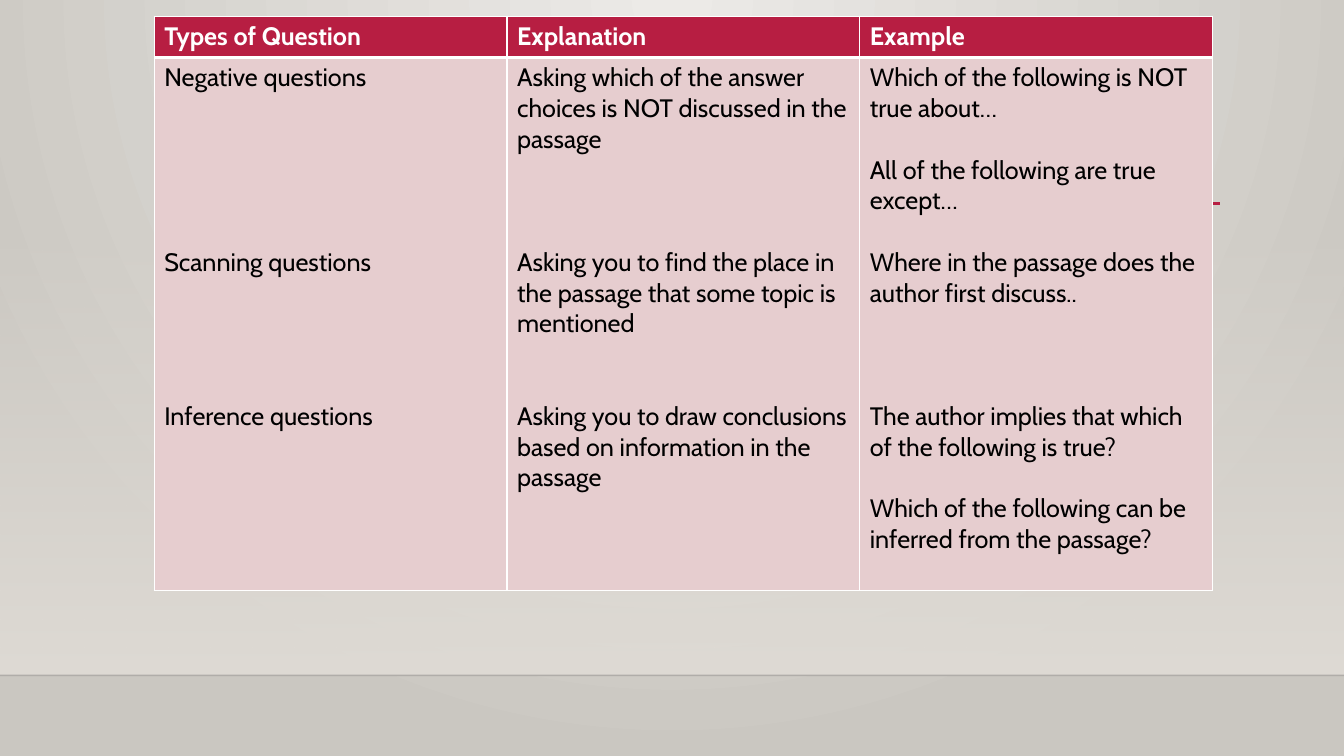
from dataclasses import dataclass
from typing import NamedTuple

from lxml.etree import SubElement
from pptx import Presentation
from pptx.dml.color import RGBColor
from pptx.enum.shapes import MSO_CONNECTOR, MSO_SHAPE
from pptx.oxml.ns import qn
from pptx.slide import Slide
from pptx.table import _Cell
from pptx.util import Pt


@dataclass(frozen=True)
class Theme:
    font: str = "Cabin"
    text_size: float = 18
    line_pitch: float = 22
    crimson: str = "B71E42"
    blush: str = "E6CDCF"
    white: str = "FFFFFF"
    black: str = "000000"
    floor_edge: str = "000001"
    wall: str = "DFDBD5"
    glow: str = "ECEAE7"
    dusk: str = "CAC7C1"


class Stop(NamedTuple):
    position: int
    color: str
    opacity: int = 100


class Rule(NamedTuple):
    left: float
    right: float
    y: float
    color: str
    weight: float
    opacity: int = 100


class Entry(NamedTuple):
    """A paragraph and the number of empty lines kept above it."""
    text: str
    lines_above: int = 0


class Column(NamedTuple):
    heading: str
    entries: list[Entry]


THEME = Theme()
SLIDE_WIDTH, SLIDE_HEIGHT = 960, 540
FLOOR_Y = 482.4
WALL_TOP = 159.12
TABLE_LEFT, TABLE_TOP = 110.16, 11.52
COLUMN_WIDTH = 252
ROW_HEIGHTS = (29.52, 381)

RULES = [
    Rule(0, SLIDE_WIDTH, FLOOR_Y, THEME.floor_edge, 1, 20),
    Rule(114.48, 871.2, 145.44, THEME.crimson, 2.5),
]

COLUMNS = [
    Column("Types of Question", [
        Entry("Negative questions"),
        Entry("Scanning questions", 5),
        Entry("Inference questions", 4),
    ]),
    Column("Explanation", [
        Entry("Asking which of the answer choices is NOT discussed in the passage"),
        Entry("Asking you to find the place in the passage that some topic is mentioned", 3),
        Entry("Asking you to draw conclusions based on information in the passage", 2),
    ]),
    Column("Example", [
        Entry("Which of the following is NOT true about…"),
        Entry("All of the following are true except…", 1),
        Entry("Where in the passage does the author first discuss..", 1),
        Entry("The author implies that which of the following is true?", 3),
        Entry("Which of the following can be inferred from the passage?", 1),
    ]),
]


def add_color(parent, color: str, opacity: int = 100) -> None:
    node = SubElement(parent, qn("a:srgbClr"), val=color)
    if opacity < 100:
        SubElement(node, qn("a:alpha"), val=str(opacity * 1000))


def reset_gradient(gradient, stops: list[Stop]) -> None:
    """Empty a gradFill element and give it new stops, without a direction."""
    for child in list(gradient):
        gradient.remove(child)
    stop_list = SubElement(gradient, qn("a:gsLst"))
    for stop in stops:
        node = SubElement(stop_list, qn("a:gs"), pos=str(stop.position * 1000))
        add_color(node, stop.color, stop.opacity)


def paint_background(slide: Slide) -> None:
    slide.background.fill.gradient()
    gradient = next(slide.element.iter(qn("a:gradFill")))
    reset_gradient(gradient, [Stop(0, THEME.glow), Stop(100, THEME.dusk)])
    circle = SubElement(gradient, qn("a:path"))
    circle.set("path", "circle")
    SubElement(circle, qn("a:fillToRect"), l="43000", t="0", r="43000", b="100000")


def add_wall(slide: Slide) -> None:
    wall = slide.shapes.add_shape(MSO_SHAPE.RECTANGLE, Pt(0), Pt(WALL_TOP),
                                  Pt(SLIDE_WIDTH), Pt(FLOOR_Y - WALL_TOP))
    wall.shadow.inherit = False
    wall.line.fill.background()
    wall.fill.gradient()
    gradient = next(wall.element.iter(qn("a:gradFill")))
    reset_gradient(gradient, [Stop(0, THEME.wall, 0), Stop(100, THEME.wall)])
    SubElement(gradient, qn("a:lin"), ang="5400000", scaled="0")


def add_rule(slide: Slide, rule: Rule) -> None:
    connector = slide.shapes.add_connector(MSO_CONNECTOR.STRAIGHT, Pt(rule.left), Pt(rule.y),
                                           Pt(rule.right), Pt(rule.y))
    connector.line.width = Pt(rule.weight)
    connector.line.color.rgb = RGBColor.from_string(rule.color)
    if rule.opacity < 100:
        color = next(connector.element.spPr.iter(qn("a:srgbClr")))
        SubElement(color, qn("a:alpha"), val=str(rule.opacity * 1000))
    SubElement(connector.element.spPr, qn("a:effectLst"))


def style_cell(cell: _Cell, fill: str, top: float, bottom: float) -> None:
    """Fill the cell and draw its white borders, which must precede the fill in the XML."""
    cell.fill.solid()
    cell.fill.fore_color.rgb = RGBColor.from_string(fill)
    properties = cell._tc.tcPr
    weights = {"lnL": 1, "lnR": 1, "lnT": top, "lnB": bottom}
    for index, (side, weight) in enumerate(weights.items()):
        border = SubElement(properties, qn(f"a:{side}"), w=str(Pt(weight)))
        add_color(SubElement(border, qn("a:solidFill")), THEME.white)
        properties.insert(index, border)


def write_entries(cell: _Cell, entries: list[Entry], color: str, bold: bool) -> None:
    frame = cell.text_frame
    frame.text = "\n".join(entry.text for entry in entries)
    for paragraph, entry in zip(frame.paragraphs, entries):
        if entry.lines_above:
            paragraph.space_before = Pt(entry.lines_above * THEME.line_pitch)
        font = paragraph.runs[0].font
        font.name = THEME.font
        font.size = Pt(THEME.text_size)
        font.bold = bold
        font.color.rgb = RGBColor.from_string(color)


def add_question_table(slide: Slide) -> None:
    frame = slide.shapes.add_table(len(ROW_HEIGHTS), len(COLUMNS), Pt(TABLE_LEFT), Pt(TABLE_TOP),
                                   Pt(COLUMN_WIDTH * len(COLUMNS)), Pt(sum(ROW_HEIGHTS)))
    table = frame.table
    table.horz_banding = False
    for row, height in zip(table.rows, ROW_HEIGHTS):
        row.height = Pt(height)
    for index, column in enumerate(COLUMNS):
        table.columns[index].width = Pt(COLUMN_WIDTH)
        heading, body = table.cell(0, index), table.cell(1, index)
        style_cell(heading, THEME.crimson, top=1, bottom=3)
        write_entries(heading, [Entry(column.heading)], THEME.white, bold=True)
        style_cell(body, THEME.blush, top=3, bottom=1)
        write_entries(body, column.entries, THEME.black, bold=False)


def main() -> None:
    presentation = Presentation()
    presentation.slide_width = Pt(SLIDE_WIDTH)
    presentation.slide_height = Pt(SLIDE_HEIGHT)
    slide = presentation.slides.add_slide(presentation.slide_layouts[6])
    paint_background(slide)
    add_wall(slide)
    for rule in RULES:
        add_rule(slide, rule)
    add_question_table(slide)
    presentation.save("out.pptx")


if __name__ == "__main__":
    main()
